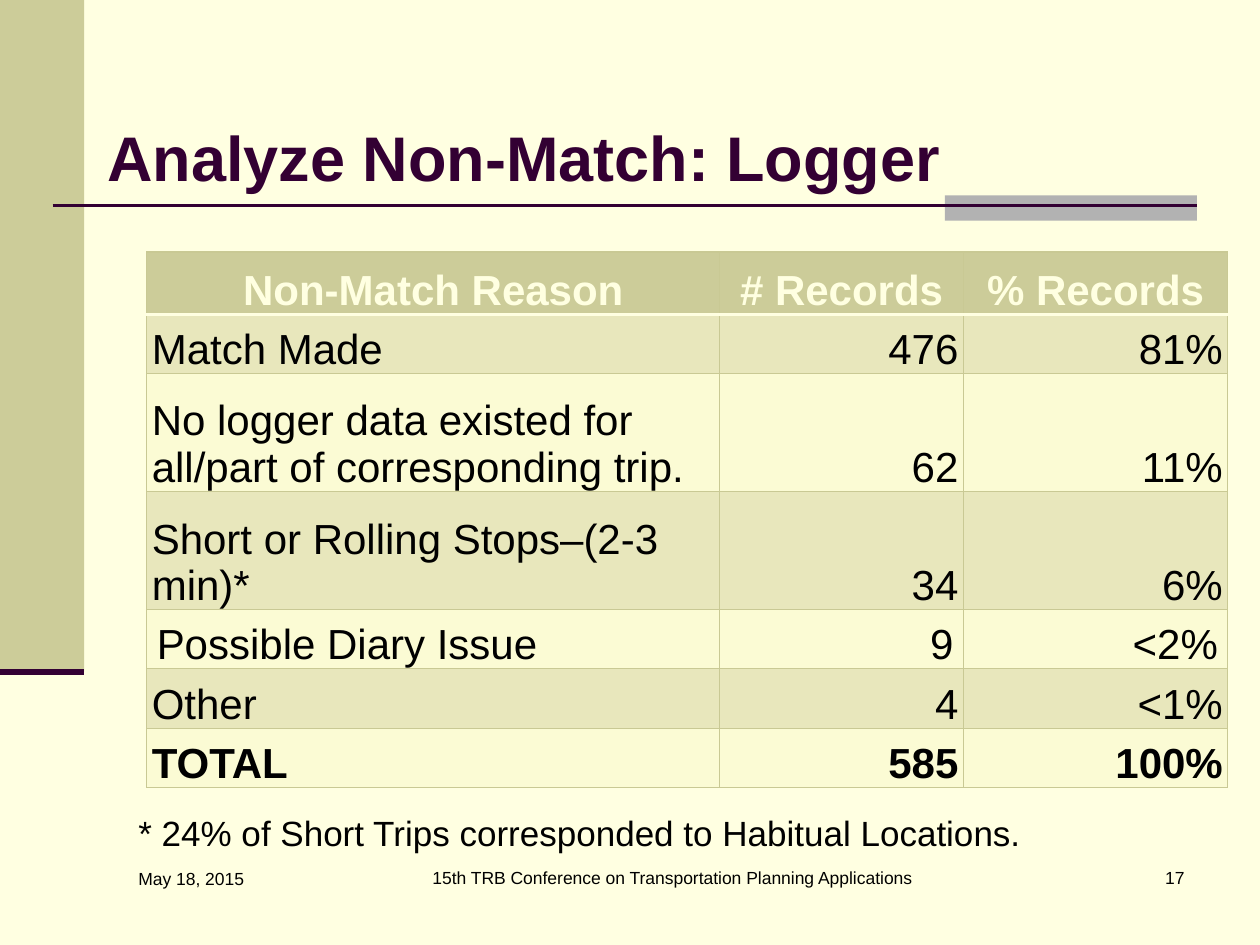
from lxml import etree
from pptx import Presentation
from pptx.dml.color import RGBColor
from pptx.enum.shapes import MSO_CONNECTOR, MSO_SHAPE
from pptx.enum.text import MSO_ANCHOR, MSO_AUTO_SIZE, PP_ALIGN
from pptx.oxml.ns import qn
from pptx.util import Cm, Pt

LEFT, CENTER, RIGHT = PP_ALIGN.LEFT, PP_ALIGN.CENTER, PP_ALIGN.RIGHT
BOTTOM, MIDDLE = MSO_ANCHOR.BOTTOM, MSO_ANCHOR.MIDDLE
RECTANGLE, STRAIGHT = MSO_SHAPE.RECTANGLE, MSO_CONNECTOR.STRAIGHT
NO_AUTOFIT = MSO_AUTO_SIZE.NONE

CREAM = RGBColor(0xFF, 0xFF, 0xE1)
KHAKI = RGBColor(0xCC, 0xCC, 0x99)
BAND = RGBColor(0xE8, 0xE7, 0xBC)
PALE = RGBColor(0xFB, 0xFB, 0xD4)
GRID = RGBColor(0xC9, 0xC9, 0x94)
GRAY = RGBColor(0xB2, 0xB2, 0xB2)
PLUM = RGBColor(0x33, 0x00, 0x33)
BLACK = RGBColor(0x00, 0x00, 0x00)
FONT = "Arial"

REASONS = [
    ("Non-Match Reason", "# Records", "% Records"),
    ("Match Made", "476", "81%"),
    ("No logger data existed for all/part of corresponding trip.", "62", "11%"),
    ("Short or Rolling Stops–(2-3 min)*", "34", "6%"),
    ("Possible Diary Issue", "9", "<2%"),
    ("Other", "4", "<1%"),
    ("TOTAL", "585", "100%"),
]
DIARY_ROW = 4
TOTAL_ROW = len(REASONS) - 1
LAST_ROW_BY_STAGE = (1, 2, 3, 5)
COLUMN_WIDTHS = (11.55, 4.91, 5.33)
ROW_HEIGHTS = (1.26, 1.19, 2.38, 2.38, 1.19, 1.2, 1.2)


def format_text(frame, size, color, bold=False, align=LEFT):
    for paragraph in frame.paragraphs:
        paragraph.alignment = align
        for run in paragraph.runs:
            run.font.name = FONT
            run.font.size = Pt(size)
            run.font.bold = bold
            run.font.color.rgb = color


def add_bar(slide, left, top, width, height, color):
    bar = slide.shapes.add_shape(RECTANGLE, Cm(left), Cm(top), Cm(width), Cm(height))
    bar.shadow.inherit = False
    bar.fill.solid()
    bar.fill.fore_color.rgb = color
    bar.line.fill.background()


def add_rule(slide, left, right, y, weight):
    rule = slide.shapes.add_connector(STRAIGHT, Cm(left), Cm(y), Cm(right), Cm(y))
    rule.line.color.rgb = PLUM
    rule.line.width = Pt(weight)
    etree.SubElement(rule._element.spPr, qn("a:effectLst"))


def add_label(slide, text, left, top, width, height, size, align=LEFT):
    label = slide.shapes.add_textbox(Cm(left), Cm(top), Cm(width), Cm(height))
    label.text_frame.word_wrap = True
    label.text_frame.text = text
    format_text(label.text_frame, size, BLACK, align=align)


def set_title(slide, text):
    title = slide.shapes.title
    title.left, title.top, title.width, title.height = Cm(1.91), Cm(2.34), Cm(23.49), Cm(1.63)
    frame = title.text_frame
    frame.text = text
    frame.auto_size = NO_AUTOFIT
    frame.vertical_anchor = MIDDLE
    format_text(frame, 36, PLUM, bold=True)


def add_border(cell, side, color, weight):
    """Draw one side (L, R, T or B); call before the cell gets its fill."""
    border = etree.SubElement(cell._tc.get_or_add_tcPr(), qn(f"a:ln{side}"), w=str(Pt(weight)))
    fill = etree.SubElement(border, qn("a:solidFill"))
    etree.SubElement(fill, qn("a:srgbClr"), val=str(color))


def format_cell(cell, row, column):
    is_header = row == 0
    cell.vertical_anchor = BOTTOM
    cell.margin_left = cell.margin_right = Cm(0.2 if row == DIARY_ROW else 0.1)
    cell.margin_top, cell.margin_bottom = Cm(0.03), Cm(0)
    for side in "LRTB":
        under_header = (row, side) in ((0, "B"), (1, "T"))
        add_border(cell, side, *((CREAM, 2) if under_header else (GRID, 0.75)))
    cell.fill.solid()
    cell.fill.fore_color.rgb = KHAKI if is_header else BAND if row % 2 else PALE
    align = CENTER if is_header else LEFT if column == 0 else RIGHT
    format_text(cell.text_frame, 24, CREAM if is_header else BLACK,
                bold=row in (0, TOTAL_ROW), align=align)


def add_reason_table(slide, last_row):
    """Add one build stage: reasons up to last_row, and always the total."""
    table = slide.shapes.add_table(
        len(REASONS), len(COLUMN_WIDTHS), Cm(2.96), Cm(5.08),
        Cm(sum(COLUMN_WIDTHS)), Cm(sum(ROW_HEIGHTS))).table
    for column, width in zip(table.columns, COLUMN_WIDTHS):
        column.width = Cm(width)
    for row, height in zip(table.rows, ROW_HEIGHTS):
        row.height = Cm(height)
    for row, values in enumerate(REASONS):
        for column, value in enumerate(values):
            cell = table.cell(row, column)
            if row <= last_row or row == TOTAL_ROW:
                cell.text_frame.text = value
            format_cell(cell, row, column)


def main():
    deck = Presentation()
    deck.slide_width, deck.slide_height = Cm(25.4), Cm(19.05)
    slide = deck.slides.add_slide(deck.slide_layouts.get_by_name("Title Only"))
    slide.background.fill.solid()
    slide.background.fill.fore_color.rgb = CREAM

    add_bar(slide, 0, 0, 1.7, 13.54, KHAKI)
    add_bar(slide, 19.05, 3.94, 5.08, 0.51, GRAY)
    add_rule(slide, 1.06, 24.13, 4.14, 1.5)
    add_rule(slide, 0, 1.7, 13.54, 3.5)

    for last_row in LAST_ROW_BY_STAGE:
        add_reason_table(slide, last_row)
    set_title(slide, "Analyze Non-Match: Logger")

    add_label(slide, "May 18, 2015", 2.54, 17.37, 5.5, 1.27, 10)
    add_label(slide, "15th TRB Conference on Transportation Planning Applications",
              3.6, 17.35, 19.9, 1.27, 10, CENTER)
    add_label(slide, "17", 18.84, 17.35, 5.29, 1.27, 10, RIGHT)
    add_label(slide, "* 24% of Short Trips corresponded to Habitual Locations.",
              2.54, 16.23, 20.32, 1.11, 20)

    deck.save("out.pptx")


if __name__ == "__main__":
    main()
